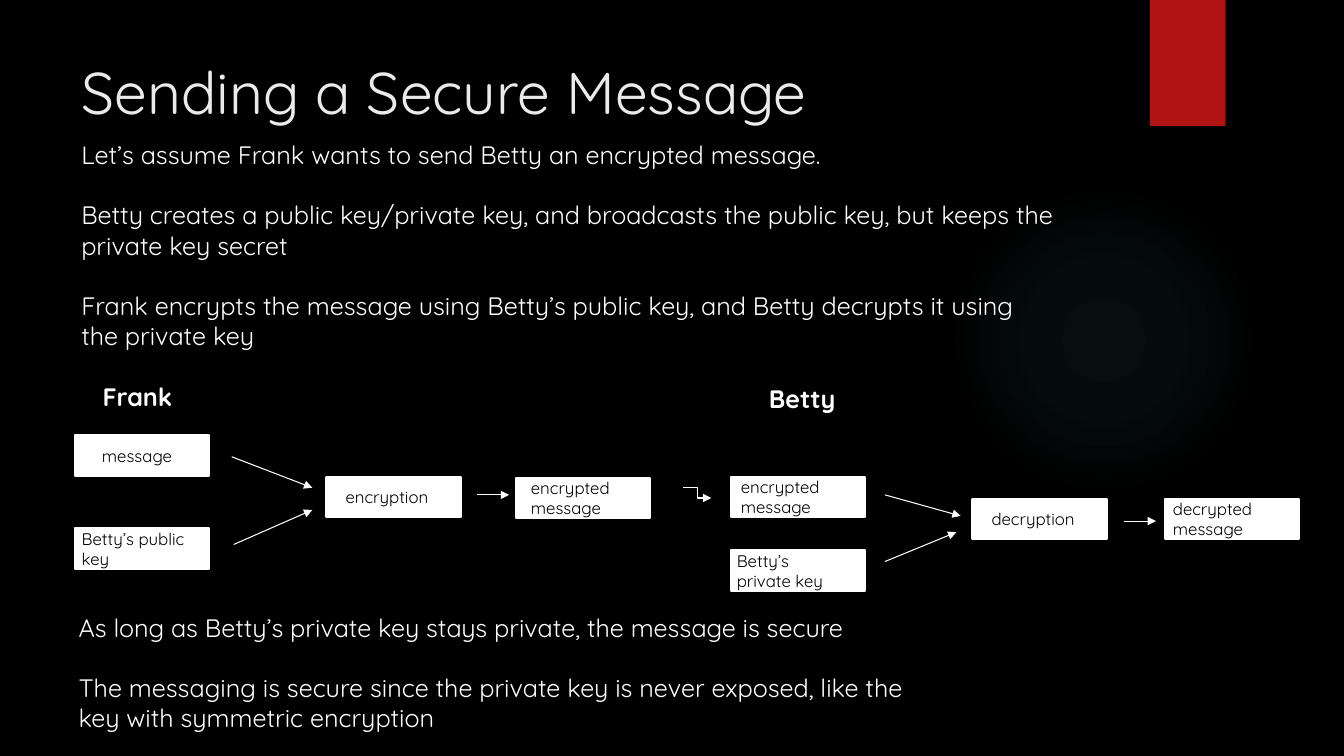
from dataclasses import dataclass

from lxml import etree
from pptx import Presentation, util as u
from pptx.dml.color import RGBColor
from pptx.enum import shapes, text
from pptx.oxml import ns
from pptx.shapes.autoshape import Shape
from pptx.shapes.connector import Connector
from pptx.slide import Slide

FONT = "Quicksand"
WHITE, BLACK, RED, TITLE_GREY = "FFFFFF", "000000", "B01513", "EBEBEB"
GLOW = "50B9C1"
GLOW_STOPS = [(0, 7), (36, 6), (69, 0)]
BOX_WIDTH, BOX_HEIGHT = 3.38, 1.02
INSET = 0.25


@dataclass
class Caption:
    lines: list[str]
    left: float
    top: float
    width: float
    height: float
    size: float = 18
    hue: str = WHITE
    bold: bool = False


@dataclass
class Box:
    label: str
    left: float
    top: float
    inset_left: float
    inset_right: float = 0.15


@dataclass
class Arrow:
    start: tuple[float, float]
    end: tuple[float, float]
    kind: shapes.MSO_CONNECTOR = shapes.MSO_CONNECTOR.STRAIGHT


CAPTIONS = [
    Caption(["Sending a Secure Message"], 1.8, 1.27, 26.14, 3.89, 42, TITLE_GREY),
    Caption(
        [
            "Let’s assume Frank wants to send Betty an encrypted message.",
            "Betty creates a public key/private key, and broadcasts the public key, "
            "but keeps the private key secret",
            "Frank encrypts the message using Betty’s public key, "
            "and Betty decrypts it using the private key",
        ],
        1.8, 3.38, 25.02, 6.4,
    ),
    Caption(["Frank"], 2.34, 9.47, 3.38, 1.02, bold=True),
    Caption(["Betty"], 19.13, 9.53, 2.18, 1.02, bold=True),
    Caption(
        [
            "As long as Betty’s private key stays private, the message is secure",
            "The messaging is secure since the private key is never exposed, "
            "like the key with symmetric encryption",
        ],
        1.73, 15.29, 21.36, 3.33,
    ),
]

BOXES = [
    Box("message", 1.88, 10.97, 0.69),
    Box("Betty’s public key", 1.88, 13.31, 0.18),
    Box("encryption", 8.23, 12.01, 0.48),
    Box("encrypted message", 13.0, 12.04, 0.38),
    Box("encrypted message", 18.42, 12.01, 0.25),
    Box("Betty’s private key", 18.42, 13.87, 0.15, 0.71),
    Box("decryption", 24.51, 12.57, 0.48),
    Box("decrypted message", 29.36, 12.57, 0.2),
]

ARROWS = [
    Arrow((5.84, 11.51), (7.87, 12.29)),
    Arrow((5.89, 13.72), (7.87, 12.85)),
    Arrow((12.01, 12.47), (12.83, 12.47)),
    Arrow((17.22, 12.29), (17.93, 12.55), shapes.MSO_CONNECTOR.ELBOW),
    Arrow((22.3, 12.47), (24.21, 13.0)),
    Arrow((22.3, 14.15), (24.1, 13.41)),
    Arrow((28.32, 13.13), (29.13, 13.13)),
]


def color(value: str) -> RGBColor:
    return RGBColor.from_string(value)


def write(shape: Shape, lines: list[str], *, size: float, hue: str,
          bold: bool = False, insets: tuple[float, float] = (INSET, INSET),
          inset_top: float = 0.13,
          anchor: text.MSO_ANCHOR = text.MSO_ANCHOR.TOP) -> None:
    frame = shape.text_frame
    frame.word_wrap = True
    frame.vertical_anchor = anchor
    frame.margin_left, frame.margin_right = map(u.Cm, insets)
    frame.margin_top = frame.margin_bottom = u.Cm(inset_top)
    for index, line in enumerate(lines):
        paragraph = frame.add_paragraph() if index else frame.paragraphs[0]
        paragraph.alignment = text.PP_ALIGN.LEFT
        if index:
            paragraph.space_before = u.Pt(size * 1.2)
        run = paragraph.add_run()
        run.text = line
        run.font.name = FONT
        run.font.size = u.Pt(size)
        run.font.bold = bold
        run.font.color.rgb = color(hue)


def add_block(slide: Slide, kind: shapes.MSO_SHAPE, left: float, top: float,
              width: float, height: float, fill: str) -> Shape:
    shape = slide.shapes.add_shape(kind, *map(u.Cm, (left, top, width, height)))
    shape.shadow.inherit = False
    shape.fill.solid()
    shape.fill.fore_color.rgb = color(fill)
    shape.line.fill.background()
    return shape


def add_glow(slide: Slide) -> None:
    shape = add_block(slide, shapes.MSO_SHAPE.OVAL, 23.9, 4.65, 7.82, 7.82, GLOW)
    properties = shape.fill._xPr
    solid = properties.find(ns.qn("a:solidFill"))
    gradient = etree.Element(ns.qn("a:gradFill"))
    stops = etree.SubElement(gradient, ns.qn("a:gsLst"))
    for position, opacity in GLOW_STOPS:
        stop = etree.SubElement(stops, ns.qn("a:gs"), pos=str(position * 1000))
        tint = etree.SubElement(stop, ns.qn("a:srgbClr"), val=GLOW)
        etree.SubElement(tint, ns.qn("a:alpha"), val=str(opacity * 1000))
    path = etree.SubElement(gradient, ns.qn("a:path"), path="circle")
    etree.SubElement(path, ns.qn("a:fillToRect"),
                     {side: "50000" for side in "ltrb"})
    properties.replace(solid, gradient)


def add_caption(slide: Slide, caption: Caption) -> None:
    area = (caption.left, caption.top, caption.width, caption.height)
    shape = slide.shapes.add_textbox(*map(u.Cm, area))
    write(shape, caption.lines, size=caption.size, hue=caption.hue, bold=caption.bold)


def add_box(slide: Slide, box: Box) -> None:
    shape = add_block(slide, shapes.MSO_SHAPE.RECTANGLE, box.left, box.top,
                      BOX_WIDTH, BOX_HEIGHT, WHITE)
    shape.line.color.rgb = color(WHITE)
    shape.line.width = u.Pt(1.5)
    write(shape, [box.label], size=12, hue=BLACK, inset_top=0,
          insets=(box.inset_left, box.inset_right), anchor=text.MSO_ANCHOR.MIDDLE)


def add_arrow(slide: Slide, arrow: Arrow) -> None:
    connector: Connector = slide.shapes.add_connector(
        arrow.kind, *map(u.Cm, arrow.start + arrow.end))
    connector.line.color.rgb = color(WHITE)
    connector.line.width = u.Pt(0.75)
    line = connector.line._get_or_add_ln()
    etree.SubElement(line, ns.qn("a:tailEnd"), type="triangle")
    etree.SubElement(line.getparent(), ns.qn("a:effectLst"))


def main() -> None:
    presentation = Presentation()
    presentation.slide_width, presentation.slide_height = u.Cm(33.87), u.Cm(19.05)
    slide = presentation.slides.add_slide(presentation.slide_layouts[6])
    slide.background.fill.solid()
    slide.background.fill.fore_color.rgb = color(BLACK)
    add_glow(slide)
    add_block(slide, shapes.MSO_SHAPE.RECTANGLE, 28.98, 0, 1.9, 3.18, RED)
    for caption in CAPTIONS:
        add_caption(slide, caption)
    for box in BOXES:
        add_box(slide, box)
    for arrow in ARROWS:
        add_arrow(slide, arrow)
    presentation.save("out.pptx")


if __name__ == "__main__":
    main()
